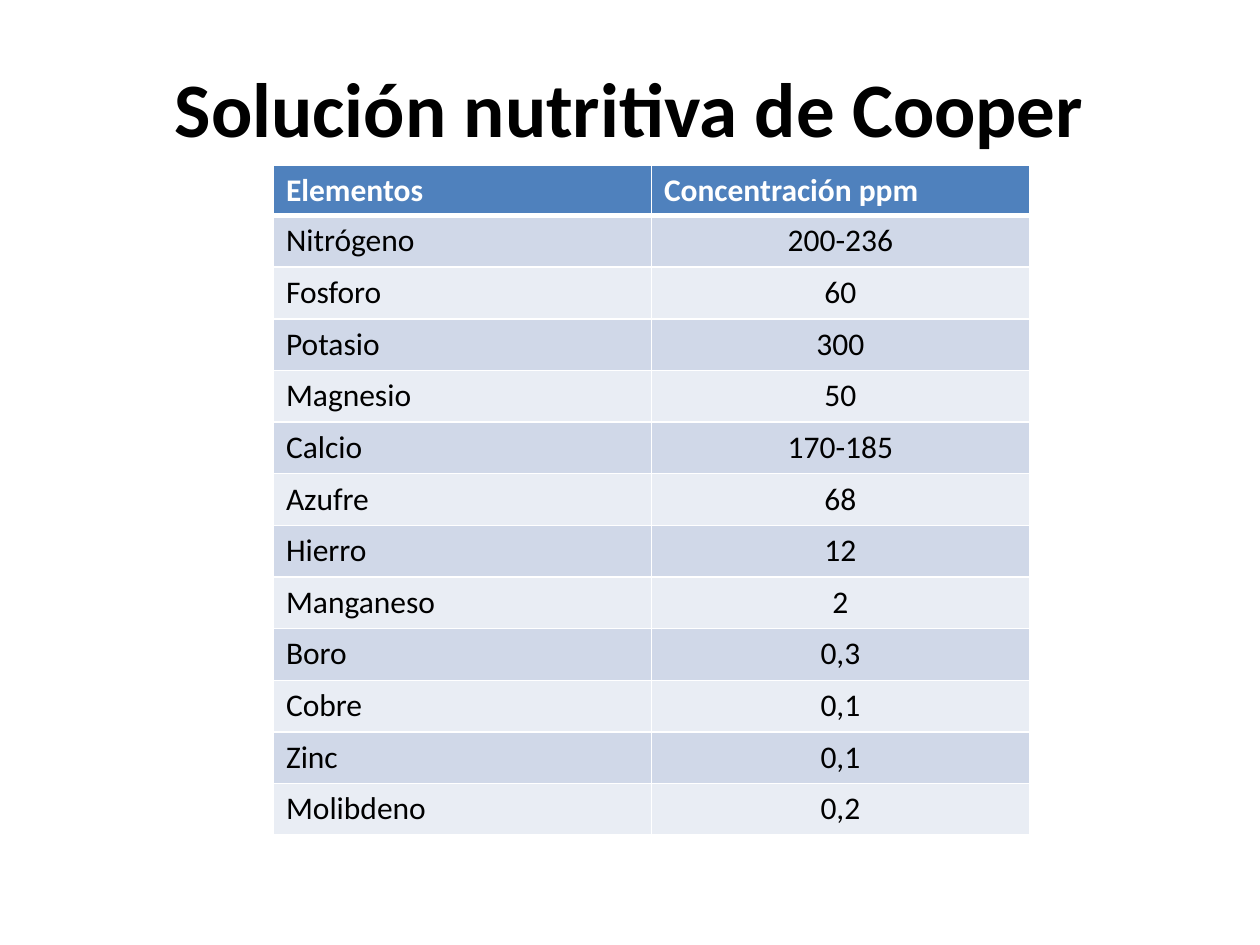
"""Build a slide with the table of a nutrient solution."""
from dataclasses import dataclass

from lxml.etree import SubElement
from pptx import Presentation
from pptx.dml.color import RGBColor
from pptx.enum.text import MSO_ANCHOR as ANCHOR, PP_ALIGN as ALIGN
from pptx.oxml.ns import qn
from pptx.util import Inches, Pt

WHITE, BLACK, BLUE = "FFFFFF", "000000", "4F81BD"
BANDS = "D0D8E8", "E9EDF4"


@dataclass
class Style:
    size: float = 18
    color: str = BLACK
    bold: bool = False
    align: ALIGN = ALIGN.LEFT


@dataclass
class Nutrient:
    name: str
    ppm: str


NUTRIENTS = [
    Nutrient("Nitrógeno", "200-236"),
    Nutrient("Fosforo", "60"),
    Nutrient("Potasio", "300"),
    Nutrient("Magnesio", "50"),
    Nutrient("Calcio", "170-185"),
    Nutrient("Azufre", "68"),
    Nutrient("Hierro", "12"),
    Nutrient("Manganeso", "2"),
    Nutrient("Boro", "0,3"),
    Nutrient("Cobre", "0,1"),
    Nutrient("Zinc", "0,1"),
    Nutrient("Molibdeno", "0,2"),
]


def rgb(color: str) -> RGBColor:
    return RGBColor.from_string(color)


def write(tf, text: str, style: Style) -> None:
    p = tf.paragraphs[0]
    p.alignment = style.align
    r = p.add_run()
    r.text = text
    values = {"name": "Calibri", "size": Pt(style.size), "bold": style.bold}
    for key, value in values.items():
        setattr(r.font, key, value)
    r.font.color.rgb = rgb(style.color)


def add_borders(cell, widths: dict[str, float]) -> None:
    tc_pr = cell._tc.get_or_add_tcPr()
    for side, width in widths.items():
        ln = SubElement(tc_pr, qn(f"a:ln{side}"), w=str(Pt(width)))
        fill = SubElement(ln, qn("a:solidFill"))
        SubElement(fill, qn("a:srgbClr"), val=WHITE)


def fill_cell(cell, text: str, fill: str, style: Style, top: float, bottom: float) -> None:
    add_borders(cell, {"L": 1, "R": 1, "T": top, "B": bottom})
    cell.fill.solid()
    cell.fill.fore_color.rgb = rgb(fill)
    write(cell.text_frame, text, style)


def add_title(slide, text: str) -> None:
    s = slide.shapes.add_textbox(Inches(0.5), Inches(0.3), Inches(9), Inches(1.09))
    tf = s.text_frame
    for key, value in {"word_wrap": True, "vertical_anchor": ANCHOR.MIDDLE}.items():
        setattr(tf, key, value)
    write(tf, text, Style(size=44, bold=True, align=ALIGN.CENTER))


def add_nutrient_table(slide, nutrients: list[Nutrient]) -> None:
    s = slide.shapes.add_table(
        len(nutrients) + 1, 2, Inches(2.17), Inches(1.31), Inches(6), Inches(5.27))
    table = s.table
    header = Style(color=WHITE, bold=True)
    for col, text in enumerate(("Elementos", "Concentración ppm")):
        fill_cell(table.cell(0, col), text, BLUE, header, top=1, bottom=3)
    table.rows[0].height = Inches(0.33)
    for row, nutrient in enumerate(nutrients, 1):
        table.rows[row].height = Inches(0.41)
        band = BANDS[(row - 1) % 2]
        top = 3 if row == 1 else 1
        fill_cell(table.cell(row, 0), nutrient.name, band, Style(), top, 1)
        fill_cell(table.cell(row, 1), nutrient.ppm, band, Style(align=ALIGN.CENTER), top, 1)


def main() -> None:
    prs = Presentation()
    prs.slide_width, prs.slide_height = Inches(10), Inches(7.5)
    slide = prs.slides.add_slide(prs.slide_layouts[6])
    add_title(slide, "Solución nutritiva de Cooper")
    add_nutrient_table(slide, NUTRIENTS)
    prs.save("out.pptx")


if __name__ == "__main__":
    main()
